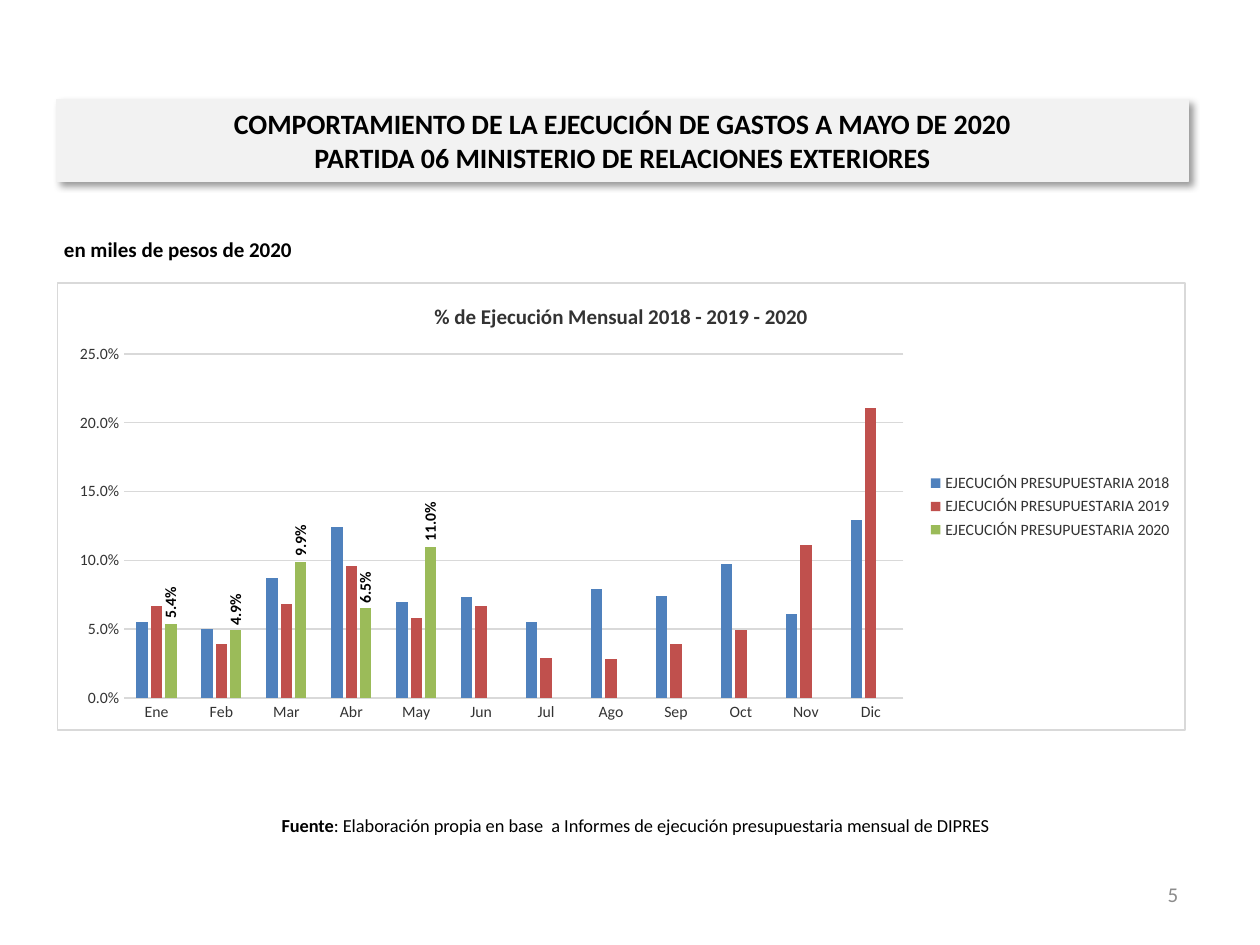
import pptx
import pptx.chart.data
import pptx.dml.color
import pptx.enum.chart
import pptx.enum.shapes
import pptx.enum.text
import pptx.oxml
import pptx.oxml.ns
import pptx.util
from pptx.util import Inches

ALIGN = pptx.enum.text.PP_ALIGN
ANCHOR = pptx.enum.text.MSO_ANCHOR
NS = pptx.oxml.ns.nsdecls("a", "c")
BLACK, DARK, GRAY, RULE, PANEL, WHITE = "000000", "333333", "8C8C8C", "D9D9D9", "F2F2F2", "FFFFFF"

MONTHS = ["Ene", "Feb", "Mar", "Abr", "May", "Jun", "Jul", "Ago", "Sep", "Oct", "Nov", "Dic"]
EXECUTION = {
    2018: ("4F81BD", [0.055, 0.05, 0.087, 0.124, 0.07, 0.073, 0.055, 0.079, 0.074, 0.097, 0.061, 0.129]),
    2019: ("C0504D", [0.067, 0.039, 0.068, 0.096, 0.058, 0.067, 0.029, 0.028, 0.039, 0.049, 0.111, 0.211]),
    2020: ("9BBB59", [0.054, 0.049, 0.099, 0.065, 0.11]),
}


def rgb(value):
    return pptx.dml.color.RGBColor.from_string(value)


class SlideBuilder:
    """Holds the style and the current slide, and adds each kind of element."""

    font_name = "Calibri"

    def __init__(self, slide):
        self.slide = slide

    def style(self, font, size, color, bold=None):
        font.name = self.font_name
        font.size = pptx.util.Pt(size)
        font.color.rgb = rgb(color)
        font.bold = bold

    def line(self, line, color):
        line.color.rgb = rgb(color)
        line.width = pptx.util.Pt(0.75)

    def text(self, box, content, size, color=BLACK, bold=False, align=ALIGN.LEFT, anchor=ANCHOR.TOP, lead=""):
        sp = self.slide.shapes.add_textbox(*map(Inches, box))
        tf = sp.text_frame
        tf.word_wrap = True
        tf.vertical_anchor = anchor
        p = tf.paragraphs[0]
        p.alignment = align
        self.style(p.font, size, color, bold)
        if lead:
            r = p.add_run()
            r.text = lead
            r.font.bold = True
        p.add_run().text = content

    def banner(self, box, content):
        sp = self.slide.shapes.add_shape(pptx.enum.shapes.MSO_SHAPE.RECTANGLE, *map(Inches, box))
        sp.fill.solid()
        sp.fill.fore_color.rgb = rgb(PANEL)
        self.line(sp.line, PANEL)
        sp._element.spPr.append(pptx.oxml.parse_xml(
            f'<a:effectLst {NS}><a:outerShdw blurRad="50800" dist="38100" dir="2700000" algn="tl" rotWithShape="0">'
            '<a:srgbClr val="000000"><a:alpha val="40000"/></a:srgbClr></a:outerShdw></a:effectLst>'))
        tf = sp.text_frame
        tf.word_wrap = True
        tf.vertical_anchor = ANCHOR.MIDDLE
        tf.margin_left = tf.margin_right = Inches(0.11)
        p = tf.paragraphs[0]
        p.text = content
        p.alignment = ALIGN.CENTER
        self.style(p.font, 16, BLACK, True)

    def chart(self, box, title):
        enum = pptx.enum.chart
        data = pptx.chart.data.CategoryChartData(number_format="0.0%")
        data.categories = MONTHS
        for year, (_, values) in EXECUTION.items():
            data.add_series(f"EJECUCIÓN PRESUPUESTARIA {year}", values)
        chart = self.slide.shapes.add_chart(
            enum.XL_CHART_TYPE.COLUMN_CLUSTERED, *map(Inches, box), data).chart
        self.style(chart.font, 10, BLACK)

        p = chart.chart_title.text_frame.paragraphs[0]
        p.text = title
        self.style(p.font, 12, DARK, True)
        chart.has_legend = True
        chart.legend.position = enum.XL_LEGEND_POSITION.RIGHT
        chart.legend.include_in_layout = False
        self.style(chart.legend.font, 9, DARK)

        for axis in (chart.category_axis, chart.value_axis):
            axis.major_tick_mark = axis.minor_tick_mark = enum.XL_TICK_MARK.NONE
            self.style(axis.tick_labels.font, 9, DARK)
        self.line(chart.category_axis.format.line, RULE)
        axis = chart.value_axis
        axis.minimum_scale, axis.maximum_scale, axis.major_unit = 0, 0.25, 0.05
        axis.format.line.fill.background()
        self.line(axis.major_gridlines.format.line, RULE)
        axis.tick_labels.number_format = "0.0%"
        axis.tick_labels.number_format_is_linked = False

        plot = chart.plots[0]
        plot.gap_width, plot.overlap, plot.vary_by_categories = 219, -27, False
        for series, (color, _) in zip(plot.series, EXECUTION.values()):
            series.invert_if_negative = False
            series.format.fill.solid()
            series.format.fill.fore_color.rgb = rgb(color)
        self.upright_labels(plot.series[-1].data_labels)

        chart._chartSpace.find(pptx.oxml.ns.qn("c:chart")).addnext(pptx.oxml.parse_xml(
            f'<c:spPr {NS}><a:solidFill><a:srgbClr val="{WHITE}"/></a:solidFill>'
            f'<a:ln w="9525"><a:solidFill><a:srgbClr val="{RULE}"/></a:solidFill></a:ln></c:spPr>'))

    def upright_labels(self, labels):
        labels.show_value = True
        labels.number_format = "0.0%"
        labels.number_format_is_linked = False
        labels.position = pptx.enum.chart.XL_LABEL_POSITION.OUTSIDE_END
        self.style(labels.font, 9, BLACK, True)
        body = labels._element.find(".//" + pptx.oxml.ns.qn("a:bodyPr"))
        body.set("rot", "-5400000")
        body.set("vert", "horz")


def main():
    prs = pptx.Presentation()
    prs.slide_width, prs.slide_height = Inches(10), Inches(7.5)
    s = SlideBuilder(prs.slides.add_slide(prs.slide_layouts[6]))
    s.text((7.12, 6.9, 2.33, 0.4), "5", 12, GRAY, align=ALIGN.RIGHT, anchor=ANCHOR.MIDDLE)
    s.banner((0.45, 0.79, 8.98, 0.65),
             "COMPORTAMIENTO DE LA EJECUCIÓN DE GASTOS A MAYO DE 2020\n"
             "PARTIDA 06 MINISTERIO DE RELACIONES EXTERIORES")
    s.text((0.41, 1.83, 9, 0.4), "en miles de pesos de 2020", 12, bold=True)
    s.text((0.45, 6.35, 9.19, 0.4),
           ": Elaboración propia en base  a Informes de ejecución presupuestaria mensual de DIPRES",
           10.5, align=ALIGN.CENTER, anchor=ANCHOR.MIDDLE, lead="Fuente")
    s.chart((0.45, 2.24, 8.96, 3.56), "% de Ejecución Mensual 2018 - 2019 - 2020")
    prs.save("out.pptx")


if __name__ == "__main__":
    main()
